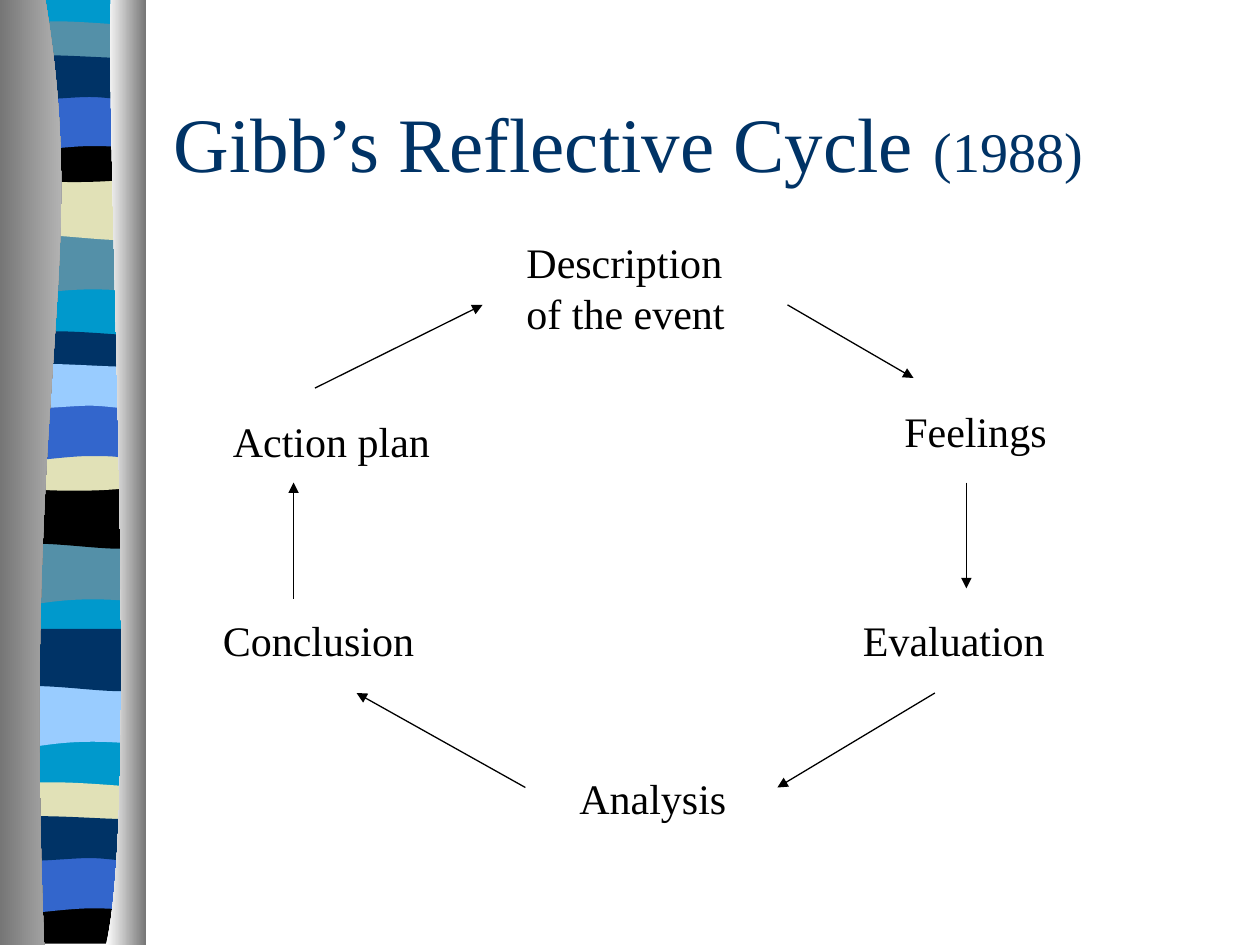
from lxml import etree
from pptx import Presentation
from pptx import util as u
from pptx.dml.color import RGBColor
from pptx.enum import shapes, text
from pptx.oxml import ns

FONT = "Times New Roman"
WHITE = RGBColor(0xFF, 0xFF, 0xFF)
BLACK = RGBColor(0x00, 0x00, 0x00)
NAVY = RGBColor(0x00, 0x33, 0x66)
BLUE = RGBColor(0x33, 0x66, 0xCC)
SKY = RGBColor(0x99, 0xCC, 0xFF)
CYAN = RGBColor(0x00, 0x99, 0xCC)
TEAL = RGBColor(0x54, 0x90, 0xA8)
SAND = RGBColor(0xE1, 0xE1, 0xB7)
GREY = RGBColor(0x76, 0x76, 0x76)
SILVER = RGBColor(0xD0, 0xD0, 0xD0)

LEFT, RIGHT = 0.05, 1.13
BOWL_TOP = (0.71, 0.05, 0.9, 0, RIGHT, 0)

BANDS = {
    "swoop": [(RIGHT, 0), (RIGHT, 0.47), (0.39, 0.39, 0.24, 0.55, LEFT, 0.47), (LEFT, 0)],
    "wave": [(RIGHT, 0), (RIGHT, 0.47), (0.96, 0.55, 0.39, 0.41, LEFT, 0.47), (LEFT, 0)],
    "lens": [(RIGHT, 0.05), (RIGHT, 0.29), (0.95, 0.34, 0.23, 0.34, LEFT, 0.29), (LEFT, 0.05),
             (0.12, 0, 0.28, 0.01, 0.46, 0.01), (0.64, 0.01, 0.99, 0.04, RIGHT, 0.05)],
    "bowl": [(RIGHT, 0), (RIGHT, 0.32), (0.95, 0.38, 0.23, 0.38, LEFT, 0.32), (LEFT, 0), BOWL_TOP],
    "cap": [(RIGHT, 0), (RIGHT, 0.37), (LEFT, 0.37), (LEFT, 0), BOWL_TOP],
    "arch": [(RIGHT, 0), (RIGHT, 0.47), (0.96, 0.42, 0.89, 0.42, 0.71, 0.42),
             (0.53, 0.42, 0.21, 0.47, LEFT, 0.47), (LEFT, 0)],
    "ripple": [(RIGHT, 0.05), (RIGHT, 0.36), (1.06, 0.41, 0.89, 0.36, 0.71, 0.36),
               (0.53, 0.36, 0.16, 0.41, LEFT, 0.36), (LEFT, 0.05),
               (0.2, 0, 0.78, 0.05, 0.96, 0.05), (1.15, 0.05, 1.1, 0.05, RIGHT, 0.05)],
    "base": [(RIGHT, 0), (RIGHT, 7.47), (LEFT, 7.47), (LEFT, 0)],
}
STRIPES = [
    ("base", 0, CYAN),
    ("swoop", 1.85, TEAL), ("wave", 1.41, SAND), ("lens", 0.16, TEAL),
    ("bowl", 1.08, BLACK), ("arch", 0.74, BLUE), ("ripple", 0.41, NAVY),
    ("swoop", 4.31, TEAL), ("wave", 3.86, BLACK), ("lens", 2.62, NAVY),
    ("bowl", 3.53, SAND), ("arch", 3.2, BLUE), ("ripple", 2.86, SKY),
    ("swoop", 5.44, SKY), ("wave", 4.99, NAVY), ("lens", 6.2, SAND),
    ("cap", 7.12, BLACK), ("arch", 6.79, BLUE), ("ripple", 6.45, NAVY),
]
PANELS = [
    ([(0.36, 0), (0.72, 2.16, 0.17, 2.96, 0.35, 7.5), (0, 7.5), (0, 0)], GREY, SILVER),
    ([(0.88, 0), (0.84, 1.25, 1.11, 6.46, 0.84, 7.5), (1.16, 7.5), (1.16, 0)], WHITE, GREY),
]
STAGES = [
    ("Description of the event", 4.08, 1.83, 1.83, 0.9),
    ("Feelings", 7.08, 3.17, 1.67, 0.5),
    ("Evaluation", 6.75, 4.83, 1.92, 0.5),
    ("Analysis", 4.5, 6.08, 1.5, 0.5),
    ("Conclusion", 1.67, 4.83, 2, 0.5),
    ("Action plan", 1.75, 3.25, 2.08, 0.5),
]
ARROWS = [
    (2.5, 3.08, 3.83, 2.42), (6.25, 2.42, 7.25, 3), (7.67, 3.83, 7.67, 4.67),
    (7.42, 5.5, 6.17, 6.25), (4.17, 6.25, 2.83, 5.5), (2.33, 4.75, 2.33, 3.83),
]


def set_values(target, values):
    """Set each named attribute of the target."""
    for name, value in values.items():
        setattr(target, name, value)


def bend(shape, segments):
    """Turn each run of three lines that stands for a cubic segment into a curve."""
    lines = iter(list(shape._element.iter(ns.qn("a:lnTo"))))
    for segment in segments:
        group = [next(lines) for _ in range(len(segment) // 2)]
        if len(group) == 1:
            continue
        curve = etree.Element(ns.qn("a:cubicBezTo"))
        group[0].addprevious(curve)
        for line in group:
            curve.append(line[0])
            line.getparent().remove(line)


def add_outline(slide, outline, top=0):
    """Add a closed, borderless freeform at the given height."""
    points = [(u.Inches(segment[i]), u.Inches(top + segment[i + 1]))
              for segment in outline for i in range(0, len(segment), 2)]
    builder = slide.shapes.build_freeform(*points[0])
    builder.add_line_segments(points[1:], close=True)
    shape = builder.convert_to_shape()
    bend(shape, outline[1:])
    shape.shadow.inherit = False
    shape.line.fill.background()
    return shape


def add_stripe(slide, kind, top, color):
    """Add one coloured band of the ribbon."""
    fill = add_outline(slide, BANDS[kind], top).fill
    fill.solid()
    fill.fore_color.rgb = color


def add_panel(slide, outline, left_color, right_color):
    """Add a side panel shaded from left to right."""
    fill = add_outline(slide, outline).fill
    fill.gradient()
    fill.gradient_angle = 0
    for stop, color in zip(fill.gradient_stops, (left_color, right_color)):
        stop.color.rgb = color


def add_run(paragraph, words, size, color):
    """Append a formatted run to the paragraph."""
    run = paragraph.add_run()
    run.text = words
    set_values(run.font, {"name": FONT, "size": u.Pt(size)})
    run.font.color.rgb = color


def add_title(slide):
    """Place and fill the title."""
    title = slide.shapes.title
    box = {"left": 1.28, "top": 0.5, "width": 8.5, "height": 1.25}
    set_values(title, {name: u.Inches(value) for name, value in box.items()})
    set_values(title.text_frame, {"word_wrap": True, "auto_size": text.MSO_AUTO_SIZE.NONE,
                                  "vertical_anchor": text.MSO_ANCHOR.MIDDLE})
    paragraph = title.text_frame.paragraphs[0]
    paragraph.alignment = text.PP_ALIGN.LEFT
    add_run(paragraph, "Gibb’s Reflective Cycle ", 44, NAVY)
    add_run(paragraph, "(1988)", 32, NAVY)


def add_stage(slide, words, *box):
    """Add the label of one stage of the cycle."""
    frame = slide.shapes.add_textbox(*map(u.Inches, box)).text_frame
    set_values(frame, {"word_wrap": True, "auto_size": text.MSO_AUTO_SIZE.SHAPE_TO_FIT_TEXT})
    add_run(frame.paragraphs[0], words, 24, BLACK)


def add_arrow(slide, *ends):
    """Add an arrow that leads to the next stage."""
    arrow = slide.shapes.add_connector(shapes.MSO_CONNECTOR.STRAIGHT, *map(u.Inches, ends))
    arrow.line.color.rgb = BLACK
    arrow.line.width = u.Pt(0.75)
    etree.SubElement(arrow.line._get_or_add_ln(), ns.qn("a:tailEnd"), type="triangle")
    etree.SubElement(arrow._element.spPr, ns.qn("a:effectLst"))


def main():
    """Build the reflective cycle slide."""
    presentation = Presentation()
    set_values(presentation, {"slide_width": u.Inches(10), "slide_height": u.Inches(7.5)})
    slide = presentation.slides.add_slide(presentation.slide_layouts[5])
    for stripe in STRIPES:
        add_stripe(slide, *stripe)
    for panel in PANELS:
        add_panel(slide, *panel)
    add_title(slide)
    for stage in STAGES:
        add_stage(slide, *stage)
    for arrow in ARROWS:
        add_arrow(slide, *arrow)
    presentation.save("out.pptx")


if __name__ == "__main__":
    main()
